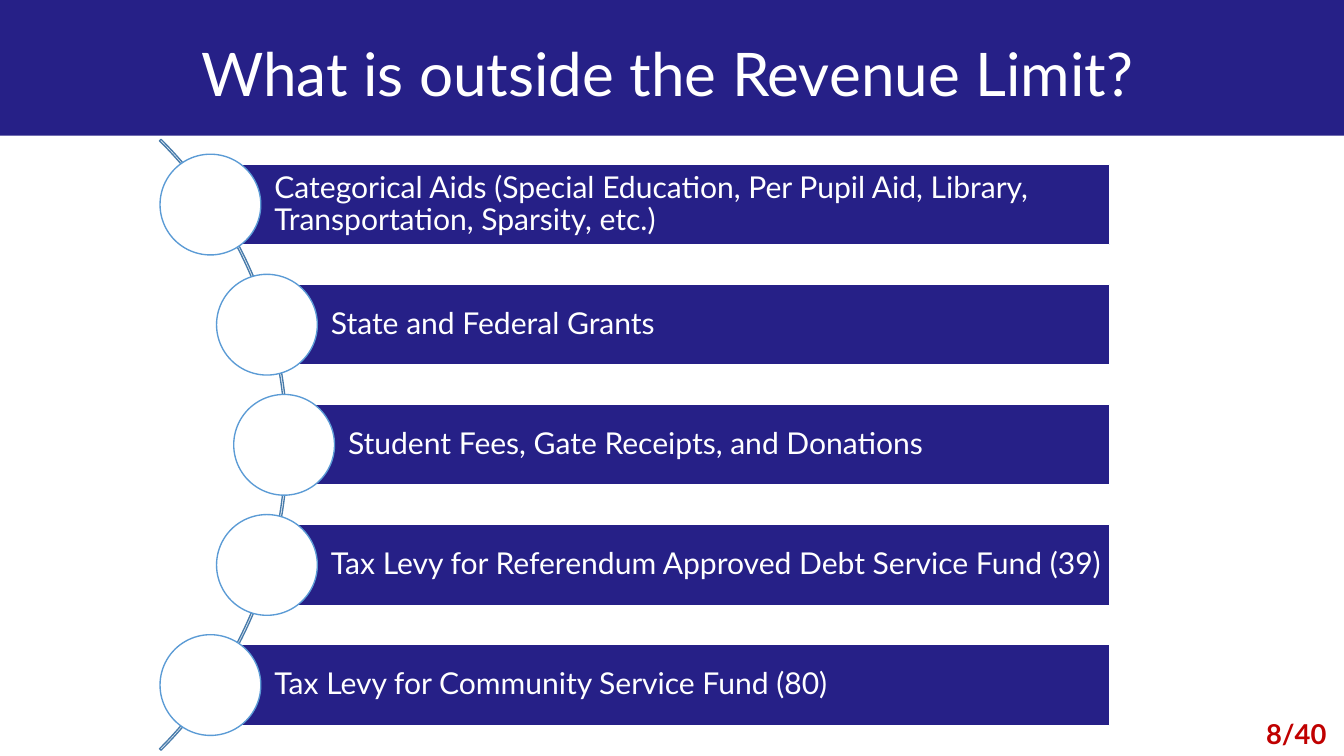
"""Build the slide on what lies outside the revenue limit."""
from math import sqrt

from pptx import Presentation
from pptx.dml.color import RGBColor
from pptx.enum.shapes import MSO_SHAPE
from pptx.enum.text import MSO_ANCHOR, MSO_AUTO_SIZE, PP_ALIGN
from pptx.util import Cm, Pt

NAVY = RGBColor(0x26, 0x20, 0x87)
WHITE = RGBColor(0xFF, 0xFF, 0xFF)
SKY = RGBColor(0x5B, 0x9B, 0xD5)
STEEL = RGBColor(0x49, 0x7C, 0xAB)
RED = RGBColor(0xC0, 0x00, 0x00)

FONT = "Lato"
WIDTH, HEIGHT = 34.67, 19.51
BANNER_HEIGHT = 3.5
ARC_X, ARC_Y, ARC_SIZE = -3.73, 11.48, 22.3
CURVE_RADIUS = 11.06
PITCH = 3.1
BAR_RIGHT, BAR_HEIGHT = 28.63, 2.08
CIRCLE = 2.6

ITEMS = [
    "Categorical Aids (Special Education, Per Pupil Aid, Library, "
    "Transportation, Sparsity, etc.)",
    "State and Federal Grants",
    "Student Fees, Gate Receipts, and Donations",
    "Tax Levy for Referendum Approved Debt Service Fund (39)",
    "Tax Levy for Community Service Fund (80)",
]


def add_box(s, kind, left, top, width, height, fill=None, line=None):
    sp = s.shapes.add_shape(kind, Cm(left), Cm(top), Cm(width), Cm(height))
    sp.shadow.inherit = False
    if fill is None:
        sp.fill.background()
    else:
        sp.fill.solid()
        sp.fill.fore_color.rgb = fill
    if line is None:
        sp.line.fill.background()
    else:
        sp.line.color.rgb = line
        sp.line.width = Pt(1)
    return sp


def write(sp, text, size, color, align, bold=False):
    tf = sp.text_frame
    tf.text = text
    tf.word_wrap = True
    tf.auto_size = MSO_AUTO_SIZE.NONE
    p = tf.paragraphs[0]
    p.alignment = align
    font = p.runs[0].font
    font.name, font.size, font.bold = FONT, Pt(size), bold
    font.color.rgb = color
    return p


def add_heading(s):
    banner = add_box(s, MSO_SHAPE.RECTANGLE, 0, 0, WIDTH, BANNER_HEIGHT, NAVY)
    title = s.shapes.title
    title._element.addprevious(banner._element)
    title.left, title.top = Cm(-0.23), Cm(0.79)
    title.width, title.height = Cm(34.9), Cm(2.16)
    write(title, "What is outside the Revenue Limit?", 44, WHITE, PP_ALIGN.CENTER)
    title.text_frame.vertical_anchor = MSO_ANCHOR.MIDDLE


def add_page_number(s):
    sp = s.shapes.add_textbox(Cm(32.21), Cm(18.39), Cm(2.46), Cm(1.12))
    write(sp, "8/40", 20, RED, PP_ALIGN.CENTER, bold=True)


def add_arc(s):
    arc = add_box(s, MSO_SHAPE.BLOCK_ARC, ARC_X - ARC_SIZE / 2,
                  ARC_Y - ARC_SIZE / 2, ARC_SIZE, ARC_SIZE, line=STEEL)
    for i, value in enumerate((189, 27, 0.0025)):
        arc.adjustments[i] = value


def add_item(s, text, offset):
    left = ARC_X + sqrt(CURVE_RADIUS ** 2 - offset ** 2)
    middle = ARC_Y + offset
    bar = add_box(s, MSO_SHAPE.RECTANGLE, left, middle - BAR_HEIGHT / 2,
                  BAR_RIGHT - left, BAR_HEIGHT, NAVY, WHITE)
    p = write(bar, text, 22, WHITE, PP_ALIGN.LEFT)
    p.line_spacing = 0.9
    tf = bar.text_frame
    tf.vertical_anchor = MSO_ANCHOR.MIDDLE
    tf.margin_left = Cm(1.65)
    tf.margin_top = tf.margin_right = tf.margin_bottom = Cm(0.15)
    add_box(s, MSO_SHAPE.OVAL, left - CIRCLE / 2, middle - CIRCLE / 2,
            CIRCLE, CIRCLE, WHITE, SKY)


def main():
    prs = Presentation()
    prs.slide_width, prs.slide_height = Cm(WIDTH), Cm(HEIGHT)
    s = prs.slides.add_slide(prs.slide_layouts[5])
    add_heading(s)
    add_page_number(s)
    add_arc(s)
    for i, text in enumerate(ITEMS):
        add_item(s, text, (i - len(ITEMS) // 2) * PITCH)
    prs.save("out.pptx")


if __name__ == "__main__":
    main()
